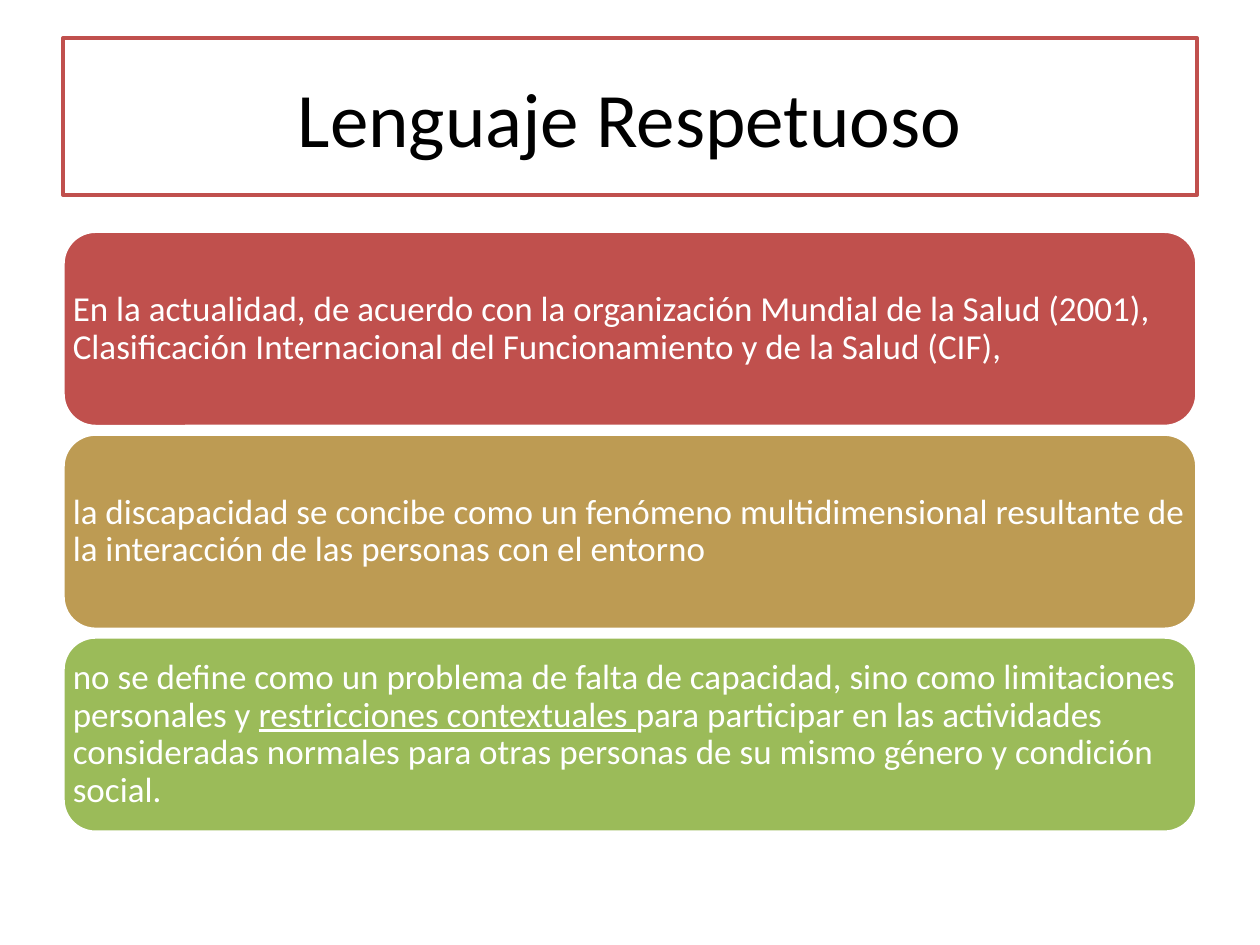
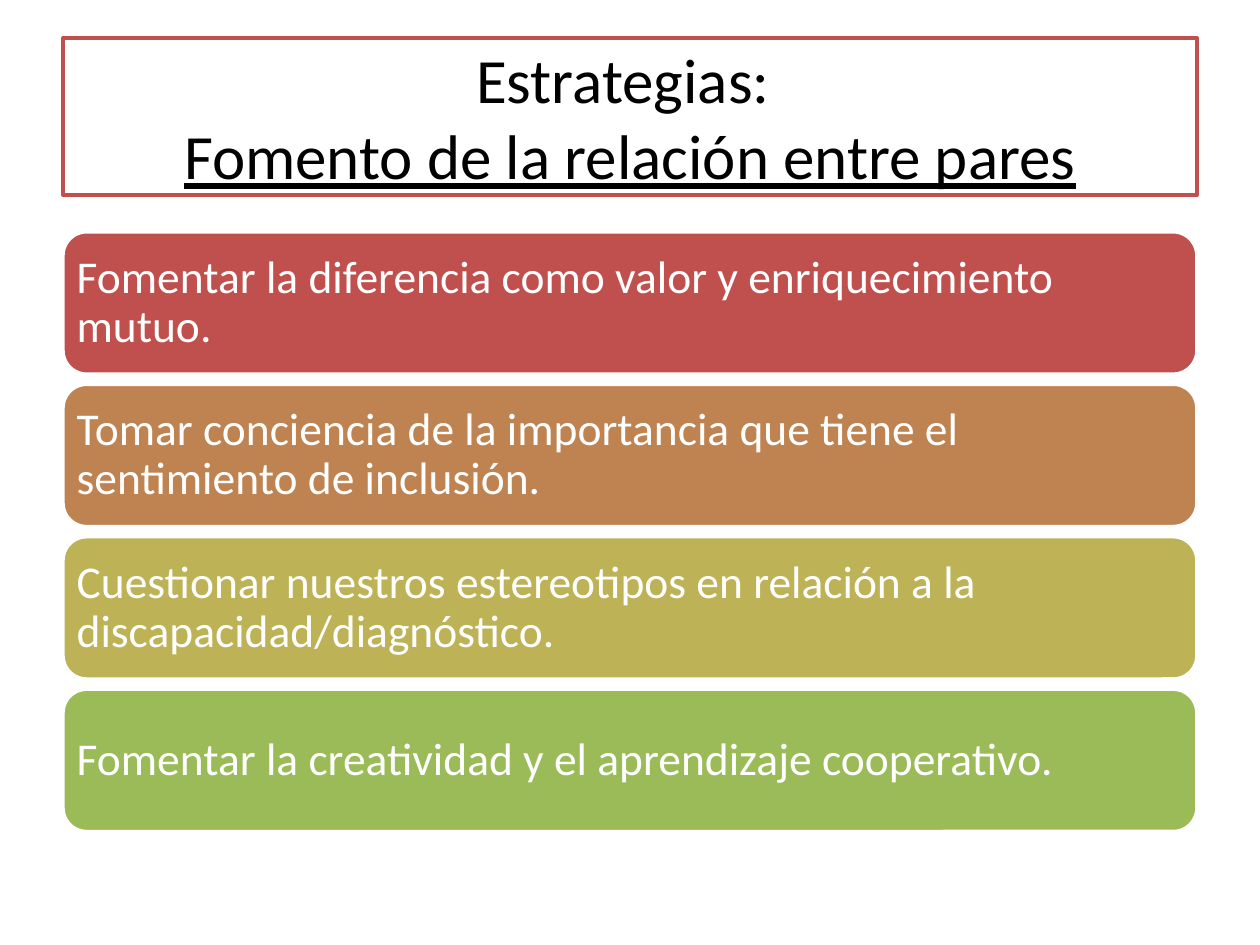
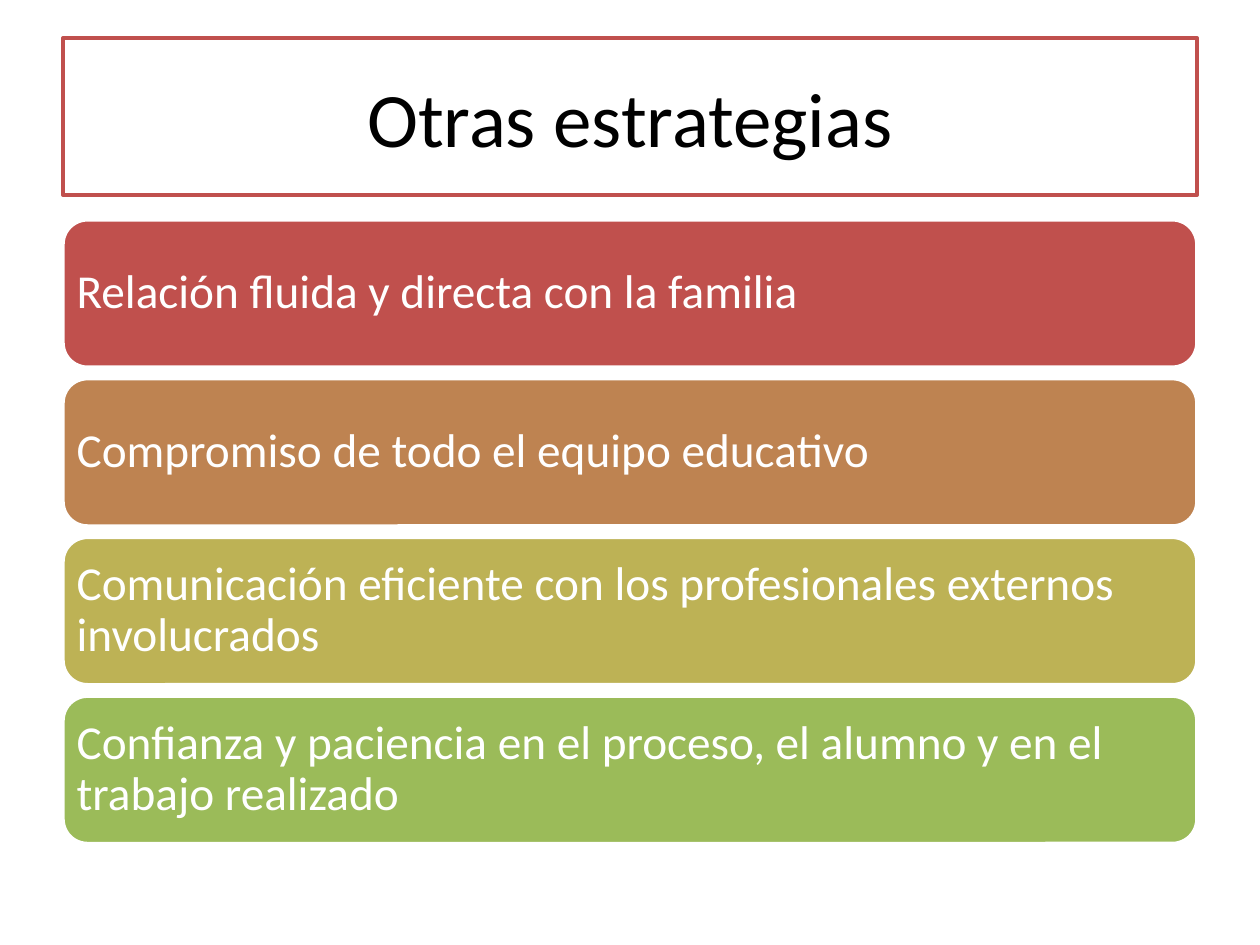
from copy import deepcopy
from dataclasses import dataclass

from pptx import Presentation
from pptx.dml.color import RGBColor
from pptx.enum.shapes import MSO_SHAPE
from pptx.enum.text import MSO_ANCHOR, MSO_AUTO_SIZE, PP_ALIGN
from pptx.util import Inches, Pt

# Shared look
FONT = "Calibri"
WHITE, BLACK = "FFFFFF", "000000"
RED, ORANGE, SAND, OLIVE, GREEN = "C0504D", "BE8351", "BD9B53", "BDB255", "9BBB59"
LEFT, WIDTH = 0.5, 9
TITLE_TOP, TITLE_HEIGHT = 0.3, 1.25
STACK_MIDDLE = 4.22
CORNER_INSET = 0.05  # text inset of a rounded corner, as a share of the height


@dataclass
class Span:
    text: str
    underline: bool = False


@dataclass
class Band:
    color: str
    spans: list[Span]


@dataclass
class BandSlide:
    title: list[list[Span]]  # lines of spans
    title_size: int
    band_height: float
    gap: float
    inset: float
    text_size: int
    bands: list[Band]


SLIDES = [
    BandSlide([[Span("Lenguaje Respetuoso")]], 44, 1.55, 0.06, 0.08, 20, [
        Band(RED, [Span("En la actualidad, de acuerdo con la organización Mundial de la Salud "
                        "(2001), Clasificación Internacional del Funcionamiento y de la Salud "
                        "(CIF),")]),
        Band(SAND, [Span("la discapacidad se concibe como un fenómeno multidimensional "
                         "resultante de la interacción de las personas con el entorno")]),
        Band(GREEN, [Span("no se define como un problema de falta de capacidad, sino como "
                          "limitaciones personales y "),
                     Span("restricciones contextuales ", True),
                     Span("para participar en las actividades consideradas normales para "
                          "otras personas de su mismo género y condición social.")]),
    ]),
    BandSlide([[Span("Estrategias: ")], [Span("Fomento de la relación entre pares", True)]],
              36, 1.13, 0.08, 0.11, 26, [
        Band(RED, [Span("Fomentar la diferencia como valor y enriquecimiento mutuo.")]),
        Band(ORANGE, [Span("Tomar conciencia de la importancia que tiene el sentimiento de "
                           "inclusión.")]),
        Band(OLIVE, [Span("Cuestionar nuestros estereotipos en relación a la "
                          "discapacidad/diagnóstico.")]),
        Band(GREEN, [Span("Fomentar la creatividad y el aprendizaje cooperativo.")]),
    ]),
    BandSlide([[Span("Otras estrategias")]], 44, 1.17, 0.09, 0.11, 27, [
        Band(RED, [Span("Relación fluida y directa con la familia")]),
        Band(ORANGE, [Span("Compromiso de todo el equipo educativo")]),
        Band(OLIVE, [Span("Comunicación eficiente con los profesionales externos "
                          "involucrados")]),
        Band(GREEN, [Span("Confianza y paciencia en el proceso, el alumno y en el trabajo "
                          "realizado")]),
    ]),
]


def rgb(color: str) -> RGBColor:
    return RGBColor.from_string(color)


def set_all(target, values: dict) -> None:
    for name, value in values.items():
        setattr(target, name, value)


def paint(sp, fill: str, line: str) -> None:
    sp.fill.solid()
    sp.fill.fore_color.rgb = rgb(fill)
    sp.line.color.rgb = rgb(line)
    sp.line.width = Pt(2)


def write_spans(p, spans: list[Span], size: int, color: str) -> None:
    for span in spans:
        r = p.add_run()
        r.text = span.text
        set_all(r.font, {"name": FONT, "size": Pt(size), "underline": span.underline})
        r.font.color.rgb = rgb(color)


def draw_title(s, item: BandSlide) -> None:
    sp = s.shapes.title
    set_all(sp, {"left": Inches(LEFT), "top": Inches(TITLE_TOP),
                 "width": Inches(WIDTH), "height": Inches(TITLE_HEIGHT)})
    paint(sp, WHITE, RED)
    tf = sp.text_frame
    set_all(tf, {"word_wrap": True, "auto_size": MSO_AUTO_SIZE.NONE,
                 "vertical_anchor": MSO_ANCHOR.MIDDLE})
    p = tf.paragraphs[0]
    p.alignment = PP_ALIGN.CENTER
    for i, spans in enumerate(item.title):
        if i:
            # The break takes the text size of the line it ends
            last_format = deepcopy(p.runs[-1].font._element)
            p.add_line_break()
            p._p[-1].append(last_format)
        write_spans(p, spans, item.title_size, BLACK)


def draw_band(s, band: Band, top: float, item: BandSlide) -> None:
    sp = s.shapes.add_shape(MSO_SHAPE.ROUNDED_RECTANGLE, Inches(LEFT), Inches(top),
                            Inches(WIDTH), Inches(item.band_height))
    sp.shadow.inherit = False
    paint(sp, band.color, WHITE)
    tf = sp.text_frame
    margin = Inches(max(0, item.inset - CORNER_INSET * item.band_height))
    set_all(tf, {f"margin_{side}": margin for side in ("left", "top", "right", "bottom")})
    set_all(tf, {"word_wrap": True, "vertical_anchor": MSO_ANCHOR.MIDDLE})
    p = tf.paragraphs[0]
    set_all(p, {"alignment": PP_ALIGN.LEFT, "line_spacing": 0.9})
    write_spans(p, band.spans, item.text_size, WHITE)


def main() -> None:
    prs = Presentation()
    set_all(prs, {"slide_width": Inches(10), "slide_height": Inches(7.5)})
    for item in SLIDES:
        s = prs.slides.add_slide(prs.slide_layouts[5])
        draw_title(s, item)
        # Equal bands, centred on one height
        pitch = item.band_height + item.gap
        top = STACK_MIDDLE - (len(item.bands) * pitch - item.gap) / 2
        for i, band in enumerate(item.bands):
            draw_band(s, band, top + i * pitch, item)
    prs.save("out.pptx")


if __name__ == "__main__":
    main()
